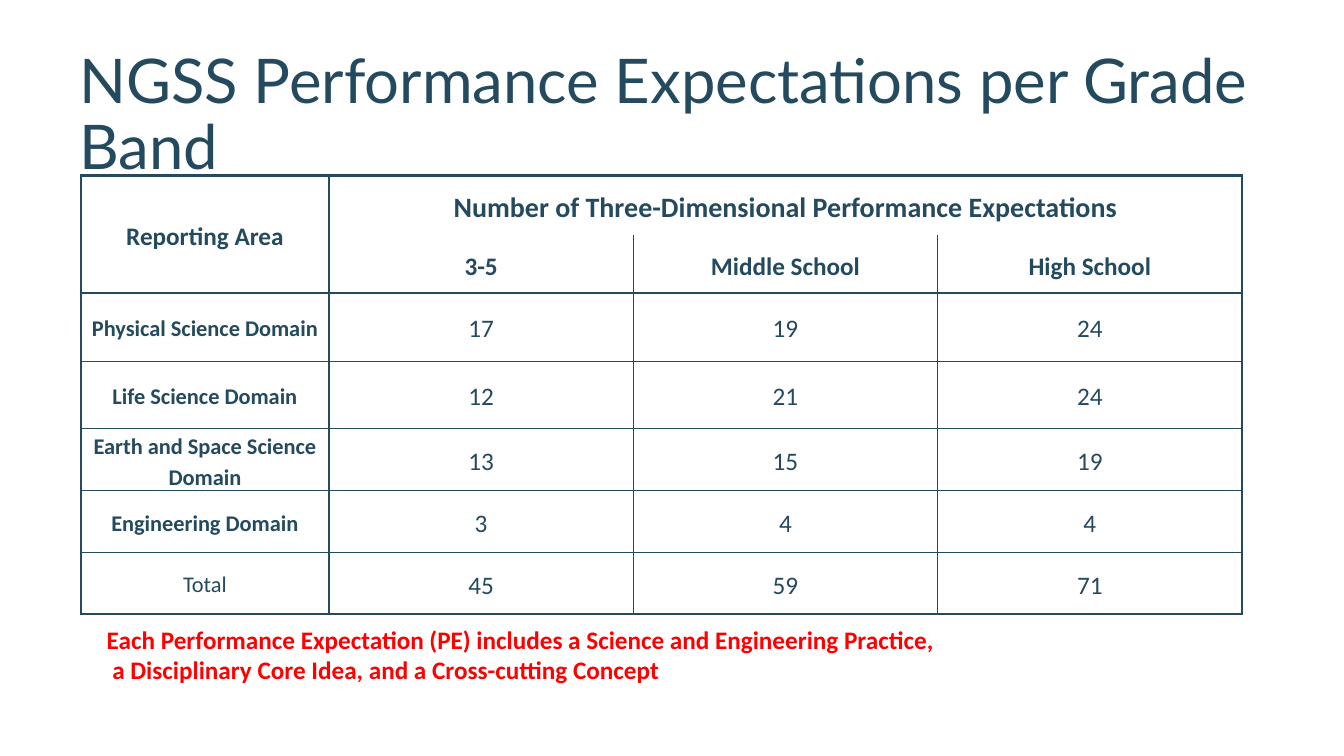
from lxml import etree
from pptx import Presentation, util as u
from pptx.dml.color import RGBColor
from pptx.enum import text
from pptx.oxml.ns import qn

TITLE = "NGSS Performance Expectations per Grade Band"
ROWS = [
    ("Reporting Area", "Number of Three-Dimensional Performance Expectations", "", ""),
    ("", "3-5", "Middle School", "High School"),
    ("Physical Science Domain", "17", "19", "24"),
    ("Life Science Domain", "12", "21", "24"),
    ("Earth and Space Science Domain", "13", "15", "19"),
    ("Engineering Domain", "3", "4", "4"),
    ("Total", "45", "59", "71"),
]
NOTE = [
    ("Each Performance Expectation (PE) includes a Science and Engineering Practice,", 0),
    ("a Disciplinary Core Idea, and a Cross-cutting Concept", 0.14),
]
SPANS = {(0, 0): (2, 1), (0, 1): (1, 3)}
WIDTHS = [6.25, 7.67, 7.67, 7.67]
HEIGHTS = [1.5, 1.45, 1.72, 1.7, 1.57, 1.55, 1.55]
THEME = {
    "ink": "244A5F", "note": "FF0000", "paper": "FFFFFF",
    "head": "Lato", "body": "Calibri",
    "title": 44, "band": 20, "text": 18, "label": 16,
    "thick": 2.25, "thin": 1,
}


def color(key):
    return RGBColor.from_string(THEME[key])


def style(item, values):
    for name, value in values.items():
        setattr(item, name, value)


def write(par, words, size, face="body", ink="ink", bold=False):
    run = par.add_run()
    run.text = words
    style(run.font, {"size": u.Pt(THEME[size]), "name": THEME[face], "bold": bold})
    run.font.color.rgb = color(ink)


def add_box(slide, x, y, w, h, anchor):
    frame = slide.shapes.add_textbox(u.Cm(x), u.Cm(y), u.Cm(w), u.Cm(h)).text_frame
    style(frame, {"word_wrap": True, "vertical_anchor": anchor})
    return frame


def side_line(row, edge):
    if edge < 2 or (row == 0 and edge == len(WIDTHS)):
        return "thick"
    return "thin"


def level_line(edge, col):
    if edge == 1 and col > 0:
        return None
    return "thick" if edge in (0, 2, len(ROWS)) else "thin"


def draw_edges(cell, edges):
    props = cell._tc.get_or_add_tcPr()
    for spot, (tag, weight) in enumerate(edges.items()):
        line = etree.Element(qn(f"a:{tag}"))
        if weight:
            line.set("w", str(u.Pt(THEME[weight])))
            fill = etree.SubElement(line, qn("a:solidFill"))
            etree.SubElement(fill, qn("a:srgbClr"), val=THEME["ink"])
        else:
            etree.SubElement(line, qn("a:noFill"))
        props.insert(spot, line)


def text_size(row, col):
    if row == 0 and col == 1:
        return "band"
    return "label" if row > 1 and col == 0 else "text"


def add_grid(slide):
    grid = slide.shapes.add_table(
        len(ROWS), len(WIDTHS), u.Cm(2.04), u.Cm(4.43),
        u.Cm(sum(WIDTHS)), u.Cm(sum(HEIGHTS))).table
    for col, width in zip(grid.columns, WIDTHS):
        col.width = u.Cm(width)
    for row, height in zip(grid.rows, HEIGHTS):
        row.height = u.Cm(height)
    for (row, col), (down, across) in SPANS.items():
        grid.cell(row, col).merge(grid.cell(row + down - 1, col + across - 1))
    for row, words in enumerate(ROWS):
        for col, word in enumerate(words):
            cell = grid.cell(row, col)
            cell.fill.solid()
            cell.fill.fore_color.rgb = color("paper")
            if cell.is_spanned:
                continue
            style(cell, {
                "vertical_anchor": text.MSO_ANCHOR.MIDDLE,
                "margin_left": u.Cm(0.18), "margin_right": u.Cm(0.18),
                "margin_top": 0, "margin_bottom": 0})
            par = cell.text_frame.paragraphs[0]
            style(par, {"alignment": text.PP_ALIGN.CENTER, "line_spacing": 1.15})
            bold = row < 2 or (col == 0 and row < len(ROWS) - 1)
            write(par, word, text_size(row, col), bold=bold)
            down, across = SPANS.get((row, col), (1, 1))
            draw_edges(cell, {
                "lnL": side_line(row, col), "lnR": side_line(row, col + across),
                "lnT": level_line(row, col), "lnB": level_line(row + down, col)})


def main():
    deck = Presentation()
    style(deck, {"slide_width": u.Cm(33.87), "slide_height": u.Cm(19.05)})
    slide = deck.slides.add_slide(deck.slide_layouts[6])
    par = add_box(slide, 1.75, 1.45, 32.12, 2.97, text.MSO_ANCHOR.MIDDLE).paragraphs[0]
    par.line_spacing = 0.9
    write(par, TITLE, "title", "head")
    add_grid(slide)
    frame = add_box(slide, 2.44, 15.6, 22.1, 1.8, text.MSO_ANCHOR.TOP)
    for index, (words, indent) in enumerate(NOTE):
        par = frame.add_paragraph() if index else frame.paragraphs[0]
        par._p.get_or_add_pPr().set("marL", str(u.Cm(indent)))
        write(par, words, "text", ink="note", bold=True)
    deck.save("out.pptx")


if __name__ == "__main__":
    main()
